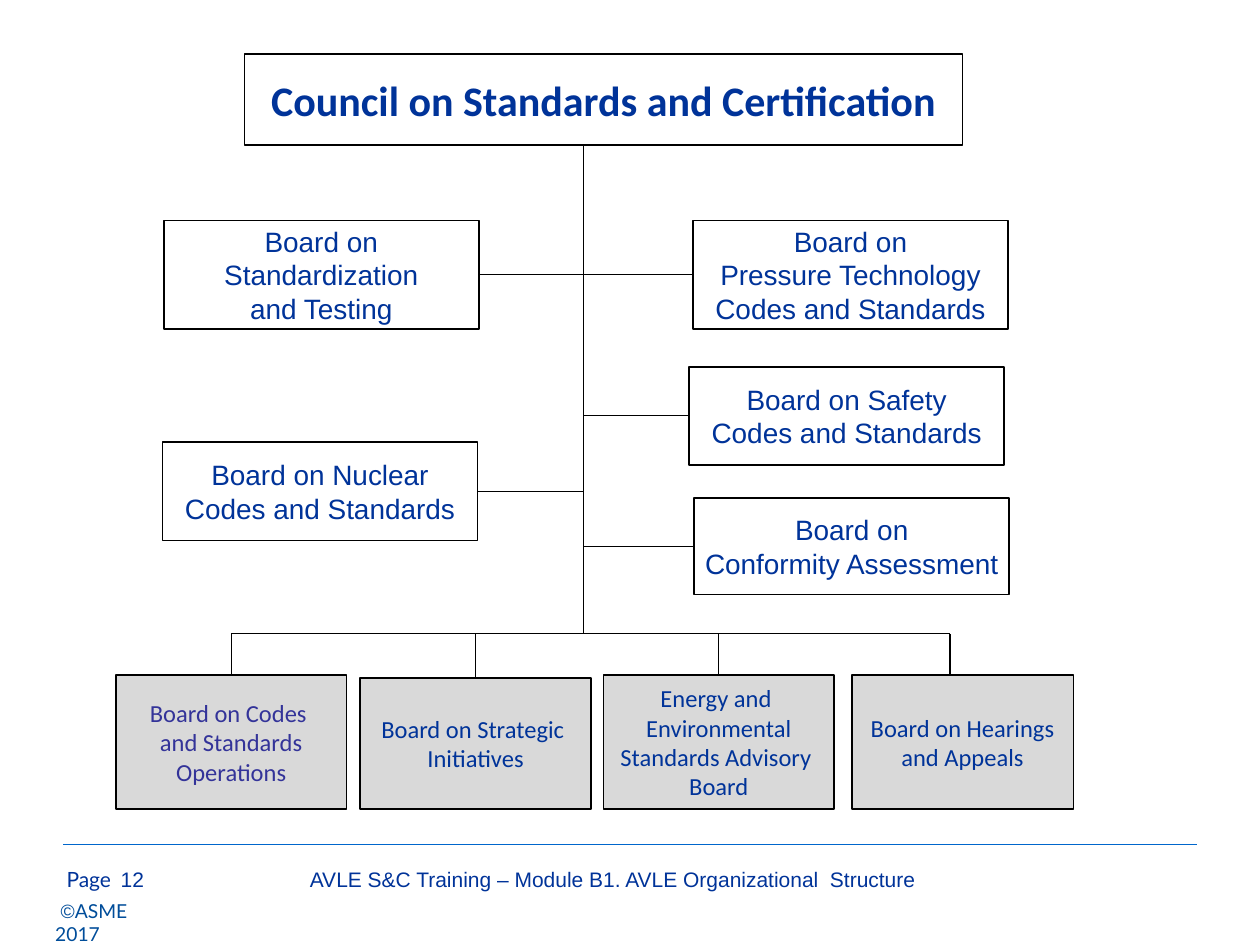
from dataclasses import dataclass

from lxml import etree
from pptx import Presentation
from pptx.dml.color import RGBColor
from pptx.enum.shapes import MSO_CONNECTOR, MSO_SHAPE
from pptx.enum.text import MSO_ANCHOR, PP_ALIGN
from pptx.oxml.ns import qn
from pptx.util import Inches, Pt

TOP, LEFT, BOTTOM, RIGHT = range(4)


@dataclass(frozen=True)
class Theme:
    navy: str = "003399"
    indigo: str = "333399"
    copyright: str = "004D9A"
    rule: str = "0066CC"
    black: str = "000000"
    grey: str = "D9D9D9"
    sans: str = "Arial"
    body: str = "Calibri"
    footer: str = "Lato"
    title_size: int = 24
    board_size: int = 16
    support_size: int = 14
    footer_size: int = 12
    copyright_size: int = 11


THEME = Theme()


def write(shape, lines, *, size, font=THEME.sans, color=THEME.navy, bold=False,
          align=PP_ALIGN.LEFT, anchor=MSO_ANCHOR.TOP, wrap=True):
    """Fill a shape with lines; a line may be a list of (text, font) spans."""
    frame = shape.text_frame
    frame.word_wrap = wrap
    frame.vertical_anchor = anchor
    for index, line in enumerate(lines):
        para = frame.paragraphs[0] if index == 0 else frame.add_paragraph()
        para.alignment = align
        for text, face in [(line, font)] if isinstance(line, str) else line:
            span = para.add_run()
            span.text = text
            span.font.name = face
            span.font.size = Pt(size)
            span.font.bold = bold
            span.font.color.rgb = RGBColor.from_string(color)


def add_label(page, box, lines, **style):
    write(page.shapes.add_textbox(*map(Inches, box)), lines, **style)


def add_box(page, box, lines, *, fill=None, **style):
    shape = page.shapes.add_shape(MSO_SHAPE.RECTANGLE, *map(Inches, box))
    shape.shadow.inherit = False
    if fill:
        shape.fill.solid()
        shape.fill.fore_color.rgb = RGBColor.from_string(fill)
    else:
        shape.fill.background()
    shape.line.color.rgb = RGBColor.from_string(THEME.black)
    shape.line.width = Pt(1)
    write(shape, lines, align=PP_ALIGN.CENTER, anchor=MSO_ANCHOR.MIDDLE,
          wrap=False, **style)
    return shape


def add_line(page, start, end, color=THEME.black):
    line = page.shapes.add_connector(MSO_CONNECTOR.STRAIGHT, *start, *end)
    line.line.color.rgb = RGBColor.from_string(color)
    line.line.width = Pt(0.75)
    etree.SubElement(line._element.spPr, qn("a:effectLst"))
    return line


def add_council(page, box, trunk, bar):
    add_box(page, box, ["Council on Standards and Certification"],
            size=THEME.title_size, font=THEME.body, bold=True)
    add_line(page, (trunk, Inches(box[1] + box[3])), (trunk, bar))


def add_board(page, box, lines, trunk):
    """Place a board beside the trunk and join its facing side to it."""
    board = add_box(page, box, lines, size=THEME.board_size)
    on_left = board.left < trunk
    edge = board.left + board.width if on_left else board.left
    middle = board.top + board.height // 2
    branch = add_line(page, (trunk, middle), (edge, middle))
    branch.end_connect(board, RIGHT if on_left else LEFT)


def add_support_row(page, boards, bar):
    """Place the grey boards under a bar, each hung from its own drop line."""
    drops = []
    for box, lines, color, drop_x in boards:
        board = add_box(page, box, lines, fill=THEME.grey, color=color,
                        size=THEME.support_size, font=THEME.body)
        x = Inches(drop_x) if drop_x else board.left + board.width // 2
        drop = add_line(page, (x, bar), (x, board.top))
        if not drop_x:
            drop.end_connect(board, TOP)
        drops.append(x)
    add_line(page, (drops[0], bar), (drops[-1], bar))


def add_footer(page, box):
    left, top, width, _ = box
    add_line(page, (Inches(left), Inches(top)),
             (Inches(left + width), Inches(top)), THEME.rule)
    text_top = top + 0.13
    size = THEME.footer_size
    add_label(page, (left - 0.07, text_top, 2.33, 0.52), ["Page"],
              size=size, font=THEME.footer)
    add_label(page, (left + 0.36, text_top, 0.47, 0.52), ["12"], size=size)
    add_label(page, (left + 1.03, text_top, 6.67, 0.52),
              ["AVLE S&C Training – Module B1. AVLE Organizational  Structure"],
              size=size, align=PP_ALIGN.CENTER)
    add_label(page, (left - 0.16, top + 0.39, 1.14, 0.29),
              [[(" ©", THEME.sans), ("ASME 2017", THEME.footer)]],
              size=THEME.copyright_size, color=THEME.copyright)


def main():
    deck = Presentation()
    deck.slide_width, deck.slide_height = Inches(10), Inches(7.5)
    page = deck.slides.add_slide(deck.slide_layouts[6])
    trunk, bar = Inches(4.63), Inches(5.03)

    add_footer(page, (0.5, 6.7, 9, 0.8))
    add_council(page, (1.94, 0.43, 5.7, 0.72), trunk, bar)
    boards = [
        ((1.3, 1.75, 2.5, 0.86), ["Board on", "Standardization", "and Testing"]),
        ((1.29, 3.51, 2.5, 0.78), ["Board on Nuclear", "Codes and Standards"]),
        ((5.5, 1.75, 2.5, 0.86),
         ["Board on", "Pressure Technology", "Codes and Standards"]),
        ((5.47, 2.91, 2.5, 0.78), ["Board on Safety", "Codes and Standards"]),
        ((5.51, 3.95, 2.5, 0.77), ["Board on", "Conformity Assessment"]),
    ]
    for box, lines in boards:
        add_board(page, box, lines, trunk)

    add_support_row(page, [
        ((0.92, 5.36, 1.83, 1.06),
         ["Board on Codes ", "and Standards", "Operations"], THEME.indigo, None),
        ((2.86, 5.38, 1.83, 1.04),
         ["Board on Strategic ", "Initiatives"], THEME.navy, None),
        ((4.79, 5.36, 1.83, 1.06),
         ["Energy and ", "Environmental", "Standards Advisory ", "Board"],
         THEME.navy, None),
        ((6.76, 5.36, 1.76, 1.06),
         ["Board on Hearings", "and Appeals"], THEME.navy, 7.54),
    ], bar)
    deck.save("out.pptx")


if __name__ == "__main__":
    main()
